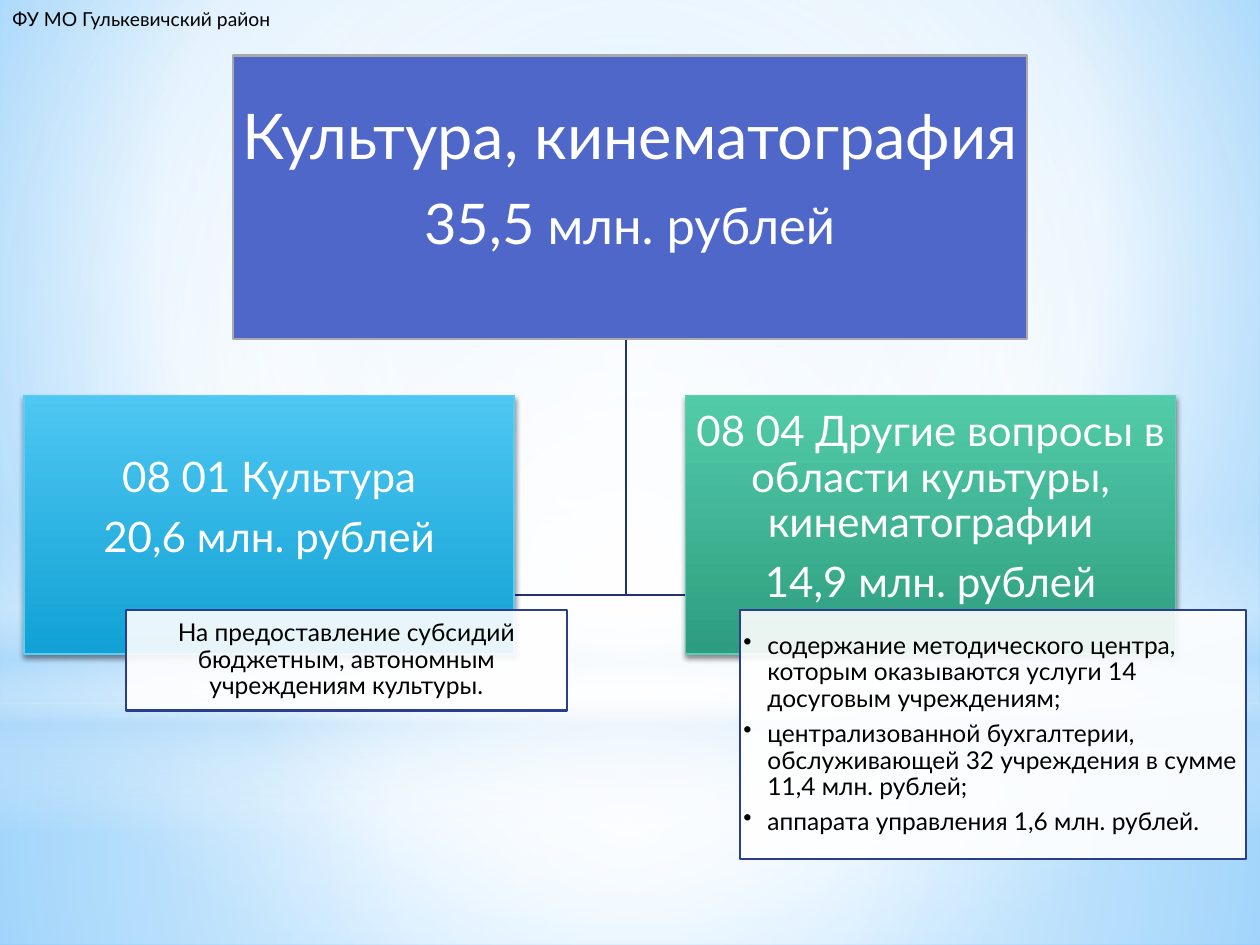
from dataclasses import dataclass

from lxml import etree
from pptx import Presentation
from pptx.dml.color import RGBColor
from pptx.enum.shapes import MSO_SHAPE
from pptx.enum.text import MSO_ANCHOR, MSO_AUTO_SIZE, PP_ALIGN
from pptx.oxml.ns import qn
from pptx.util import Inches, Pt

RECTANGLE, OVAL = MSO_SHAPE.RECTANGLE, MSO_SHAPE.OVAL
MIDDLE = MSO_ANCHOR.MIDDLE
LEFT, CENTER = PP_ALIGN.LEFT, PP_ALIGN.CENTER
FIT_SHAPE = MSO_AUTO_SIZE.SHAPE_TO_FIT_TEXT


@dataclass(frozen=True)
class Theme:
    font: str = "Lato"
    white: str = "FFFFFF"
    black: str = "000000"
    sky: str = "B4DCFA"
    background_center: str = "9ED5FF"
    background_edge: str = "5BB9FF"
    title_fill: str = "4E67C8"
    title_line: str = "A9A9A9"
    branch: str = "213172"
    note_line: str = "2A3E8E"
    blue: tuple = ("4EC7F2", "11A1D4", "5ECCF3")
    green: tuple = ("52CBA9", "2E9D7F", "5DCEAF")
    title_size: int = 36
    amount_size: int = 32
    unit_size: int = 29
    card_size: int = 24
    note_size: int = 14
    label_size: int = 11
    line: float = 1.25
    thin_line: float = 0.75


THEME = Theme()


def add_color(parent, color, opacity=100):
    element = etree.SubElement(parent, qn("a:srgbClr"), val=color)
    if opacity < 100:
        etree.SubElement(element, qn("a:alpha"), val=str(opacity * 1000))


def set_gradient(fill, properties, stops, focus=None):
    """Fill with (position, color, opacity) stops: circular around focus, else downwards."""
    fill.solid()
    gradient = etree.Element(qn("a:gradFill"), rotWithShape="1")
    stop_list = etree.SubElement(gradient, qn("a:gsLst"))
    for position, color, opacity in stops:
        stop = etree.SubElement(stop_list, qn("a:gs"), pos=str(position * 1000))
        add_color(stop, color, opacity)
    if focus:
        circle = etree.SubElement(gradient, qn("a:path"), path="circle")
        sides = {side: str(value * 1000) for side, value in zip("ltrb", focus)}
        etree.SubElement(circle, qn("a:fillToRect"), **sides)
    else:
        etree.SubElement(gradient, qn("a:lin"), ang="5400000", scaled="0")
    properties.replace(properties.find(qn("a:solidFill")), gradient)


def set_line(shape, color, width):
    shape.line.color.rgb = RGBColor.from_string(color)
    shape.line.width = Pt(width)


def add_panel(slide, box, kind=RECTANGLE):
    shape = slide.shapes.add_shape(kind, *map(Inches, box))
    shape.shadow.inherit = False
    shape.line.fill.background()
    return shape


def add_glow(slide, box, stops, focus=(50, 50, 50, 50), kind=RECTANGLE):
    shape = add_panel(slide, box, kind)
    set_gradient(shape.fill, shape._element.spPr, stops, focus)


def add_drop_shadow(shape):
    effects = shape._element.spPr.find(qn("a:effectLst"))
    shadow = etree.SubElement(
        effects, qn("a:outerShdw"), blurRad=str(Pt(3.1)), dist=str(Pt(1.8)),
        dir="5400000", rotWithShape="0")
    add_color(shadow, THEME.black, 45)


def add_bullet(paragraph):
    properties = paragraph._p.get_or_add_pPr()
    properties.set("marL", str(Inches(0.19)))
    properties.set("indent", str(-Inches(0.19)))
    etree.SubElement(properties, qn("a:buChar"), char="•")


def write(shape, paragraphs, color, insets, bullets=False):
    """Write paragraphs, each a list of (text, size) runs."""
    frame = shape.text_frame
    frame.word_wrap = True
    frame.vertical_anchor = MIDDLE
    (frame.margin_left, frame.margin_top,
     frame.margin_right, frame.margin_bottom) = map(Inches, insets)
    for index, runs in enumerate(paragraphs):
        paragraph = frame.add_paragraph() if index else frame.paragraphs[0]
        if bullets:
            add_bullet(paragraph)
        paragraph.alignment = LEFT if bullets else CENTER
        paragraph.line_spacing = 0.9
        paragraph.space_after = Pt(0.35 * runs[0][1])
        for text, size in runs:
            run = paragraph.add_run()
            run.text = text
            format_font(run.font, size, color)


def format_font(font, size, color):
    font.name = THEME.font
    font.size = Pt(size)
    font.color.rgb = RGBColor.from_string(color)


def add_background(slide):
    white, sky = THEME.white, THEME.sky
    fill = slide.background.fill
    fill.solid()
    properties = slide._element.cSld.find(qn("p:bg")).find(qn("p:bgPr"))
    set_gradient(fill, properties,
                 [(0, THEME.background_center, 100), (60, white, 100),
                  (100, THEME.background_edge, 100)], (20, 10, 20, 60))
    add_glow(slide, (0, 5.58, 10, 1.92), [(0, white, 91), (37, white, 76), (100, sky, 79)])
    add_glow(slide, (0, 0, 10, 5.58), [(0, white, 89), (48, white, 62), (100, sky, 79)])
    add_glow(slide, (0, 4.12, 10, 2.5),
             [(0, white, 0), (29, white, 30), (45, sky, 40),
              (55, white, 26), (65, sky, 60), (100, white, 0)], focus=None)
    add_glow(slide, (0, 1.75, 10, 5.58), [(0, white, 100), (56, white, 0)], kind=OVAL)


def add_branch(slide, end_x):
    """Draw the elbow from under the title to the side of a card."""
    trunk_x, top, bottom = Inches(4.97), Inches(2.69), Inches(4.72)
    builder = slide.shapes.build_freeform(trunk_x, top)
    builder.add_line_segments([(trunk_x, bottom), (Inches(end_x), bottom)], close=False)
    branch = builder.convert_to_shape()
    branch.shadow.inherit = False
    branch.fill.background()
    set_line(branch, THEME.branch, THEME.line)


def add_title(slide):
    shape = add_panel(slide, (1.85, 0.44, 6.3, 2.25))
    shape.fill.solid()
    shape.fill.fore_color.rgb = RGBColor.from_string(THEME.title_fill)
    set_line(shape, THEME.title_line, THEME.line)
    write(shape, [[("Культура, кинематография", THEME.title_size)],
                  [("35,5", THEME.amount_size), (" млн. рублей", THEME.unit_size)]],
          THEME.white, (0.02, 0.02, 0.02, 0.28))


def add_card(slide, left, colors, lines):
    top_color, bottom_color, line_color = colors
    shape = add_panel(slide, (left, 3.14, 3.89, 2.05))
    set_gradient(shape.fill, shape._element.spPr,
                 [(0, top_color, 100), (100, bottom_color, 100)])
    set_line(shape, line_color, THEME.thin_line)
    add_drop_shadow(shape)
    write(shape, [[(line, THEME.card_size)] for line in lines],
          THEME.white, (0.02, 0.02, 0.02, 0.28))


def add_note(slide, box, lines, side_inset, bullets=False):
    shape = add_panel(slide, box)
    shape.fill.solid()
    shape.fill.fore_color.rgb = RGBColor.from_string(THEME.white)
    color = shape._element.spPr.find(qn("a:solidFill"))[0]
    etree.SubElement(color, qn("a:alpha"), val="90000")
    set_line(shape, THEME.note_line, THEME.line)
    write(shape, [[(line, THEME.note_size)] for line in lines], THEME.black,
          (side_inset, 0.01, side_inset, 0.01), bullets)


def add_label(slide, text):
    box = slide.shapes.add_textbox(0, Inches(0.01), Inches(2.25), Inches(0.29))
    frame = box.text_frame
    frame.word_wrap = False
    frame.auto_size = FIT_SHAPE
    frame.text = text
    format_font(frame.paragraphs[0].runs[0].font, THEME.label_size, THEME.black)


def main():
    presentation = Presentation()
    presentation.slide_width, presentation.slide_height = Inches(10), Inches(7.5)
    slide = presentation.slides.add_slide(presentation.slide_layouts[6])
    add_background(slide)
    for card_side in (5.44, 4.08):
        add_branch(slide, card_side)
    add_title(slide)
    add_card(slide, 0.19, THEME.blue, ["08 01 Культура", "20,6 млн. рублей"])
    add_note(slide, (1, 4.84, 3.5, 0.8),
             ["На предоставление субсидий бюджетным, автономным учреждениям культуры."], 0.04)
    add_card(slide, 5.44, THEME.green,
             ["08 04 Другие вопросы в области культуры, кинематографии", "14,9 млн. рублей"])
    add_note(slide, (5.87, 4.84, 4.02, 1.98), [
        "содержание методического центра, которым оказываются услуги 14 досуговым учреждениям;",
        "централизованной бухгалтерии, обслуживающей 32 учреждения в сумме 11,4 млн. рублей;",
        "аппарата управления 1,6 млн. рублей.",
    ], 0.03, bullets=True)
    add_label(slide, "ФУ МО Гулькевичский район")
    presentation.save("out.pptx")


if __name__ == "__main__":
    main()
